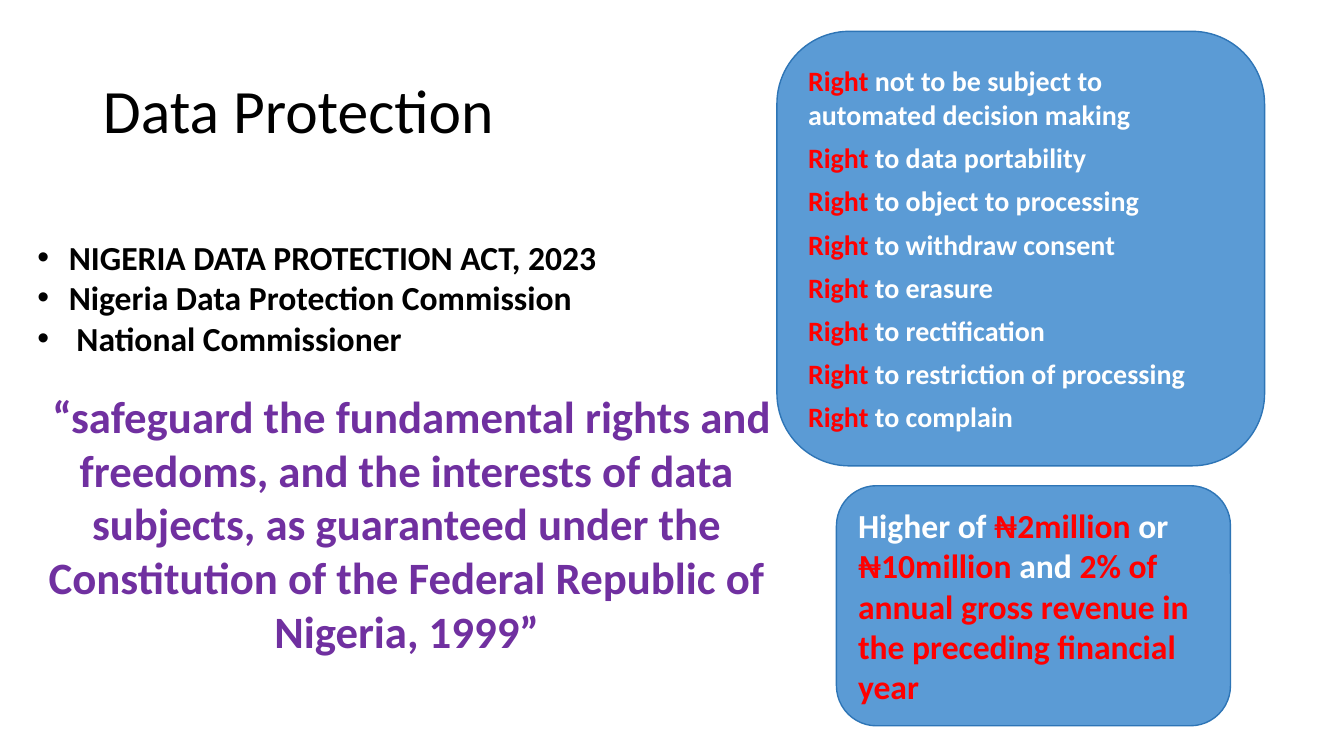
"""Build the Data Protection slide."""
from lxml.etree import SubElement
from pptx import Presentation
from pptx.dml.color import RGBColor
from pptx.enum.shapes import MSO_SHAPE as SHAPE
from pptx.enum.text import MSO_ANCHOR as ANCHOR, MSO_AUTO_SIZE as AUTO, PP_ALIGN as ALIGN
from pptx.oxml.ns import qn
from pptx.util import Cm, Pt

COLORS = {"black": "000000", "purple": "7030A0", "red": "FF0000",
          "white": "FFFFFF", "blue": "5B9BD5", "edge": "2E75B6"}
FONT = "Calibri"
TITLE = "Data Protection"
BULLETS = ["NIGERIA DATA PROTECTION ACT, 2023",
           "Nigeria Data Protection Commission",
           " National Commissioner"]
QUOTE = (" “safeguard the fundamental rights and freedoms, and the interests of "
         "data subjects, as guaranteed under the Constitution of the Federal "
         "Republic of Nigeria, 1999”")
RIGHTS = ["not to be subject to automated decision making",
          "to data portability", "to object to processing",
          "to withdraw consent", "to erasure", "to rectification",
          "to restriction of processing", "to complain"]
PENALTY = [("Higher of ", "white"), ("₦2million", "red"), (" or ", "white"),
           ("₦10million ", "red"), ("and ", "white"),
           ("2% of annual gross revenue in the preceding financial year", "red")]
BOXES = {"title": (2.34, 1.02, 29.21, 3.68), "body": (0.69, 5.84, 19.13, 10.95),
         "rights": (19.58, 0.79, 12.29, 10.95), "penalty": (21.08, 12.24, 9.93, 6.05)}


def rgb(name):
    return RGBColor.from_string(COLORS[name])


def style(r, size, color, bold=True):
    r.font.name, r.font.size, r.font.bold = FONT, Pt(size), bold
    r.font.color.rgb = rgb(color)


def place(sp, name):
    sp.left, sp.top, sp.width, sp.height = map(Cm, BOXES[name])


def set_bullet(p, indent=0.0, char=None):
    pPr = p._p.get_or_add_pPr()
    pPr.set("marL", str(Cm(indent)))
    pPr.set("indent", str(-Cm(indent)))
    if char:
        SubElement(pPr, qn("a:buFont")).set("typeface", "Arial")
        SubElement(pPr, qn("a:buChar")).set("char", char)
    else:
        SubElement(pPr, qn("a:buNone"))


def add_card(slide, name, paragraphs, size):
    sp = slide.shapes.add_shape(SHAPE.ROUNDED_RECTANGLE, *map(Cm, BOXES[name]))
    sp.shadow.inherit = False
    sp.fill.solid()
    sp.fill.fore_color.rgb = rgb("blue")
    sp.line.color.rgb = rgb("edge")
    sp.line.width = Pt(1)
    tf = sp.text_frame
    tf.word_wrap = True
    tf.vertical_anchor = ANCHOR.MIDDLE
    for i, runs in enumerate(paragraphs):
        p = tf.add_paragraph() if i else tf.paragraphs[0]
        p.alignment = ALIGN.LEFT
        p.space_after = Pt(size * 0.34)
        for text, color in runs:
            r = p.add_run()
            r.text = text
            style(r, size, color)


def main():
    prs = Presentation()
    prs.slide_width, prs.slide_height = Cm(33.87), Cm(19.05)
    slide = prs.slides.add_slide(prs.slide_layouts[1])

    title, body = slide.placeholders
    place(title, "title")
    tf = title.text_frame
    tf.text = TITLE
    tf.auto_size = AUTO.NONE
    tf.vertical_anchor = ANCHOR.MIDDLE
    p = tf.paragraphs[0]
    p.alignment, p.line_spacing = ALIGN.LEFT, 0.9
    style(p.runs[0], 44, "black", bold=False)

    place(body, "body")
    tf = body.text_frame
    tf.text = "\n".join(BULLETS + [QUOTE])
    tf.auto_size = AUTO.NONE
    *items, quote = tf.paragraphs
    for p in items:
        p.space_before = Pt(0)
        set_bullet(p, 0.79, "•")
        style(p.runs[0], 24, "black")
    quote.alignment, quote.space_before = ALIGN.CENTER, Pt(22)
    set_bullet(quote)
    style(quote.runs[0], 32, "purple")

    add_card(slide, "rights", [[("Right ", "red"), (t, "white")] for t in RIGHTS], 20)
    add_card(slide, "penalty", [PENALTY], 24)
    prs.save("out.pptx")


if __name__ == "__main__":
    main()
